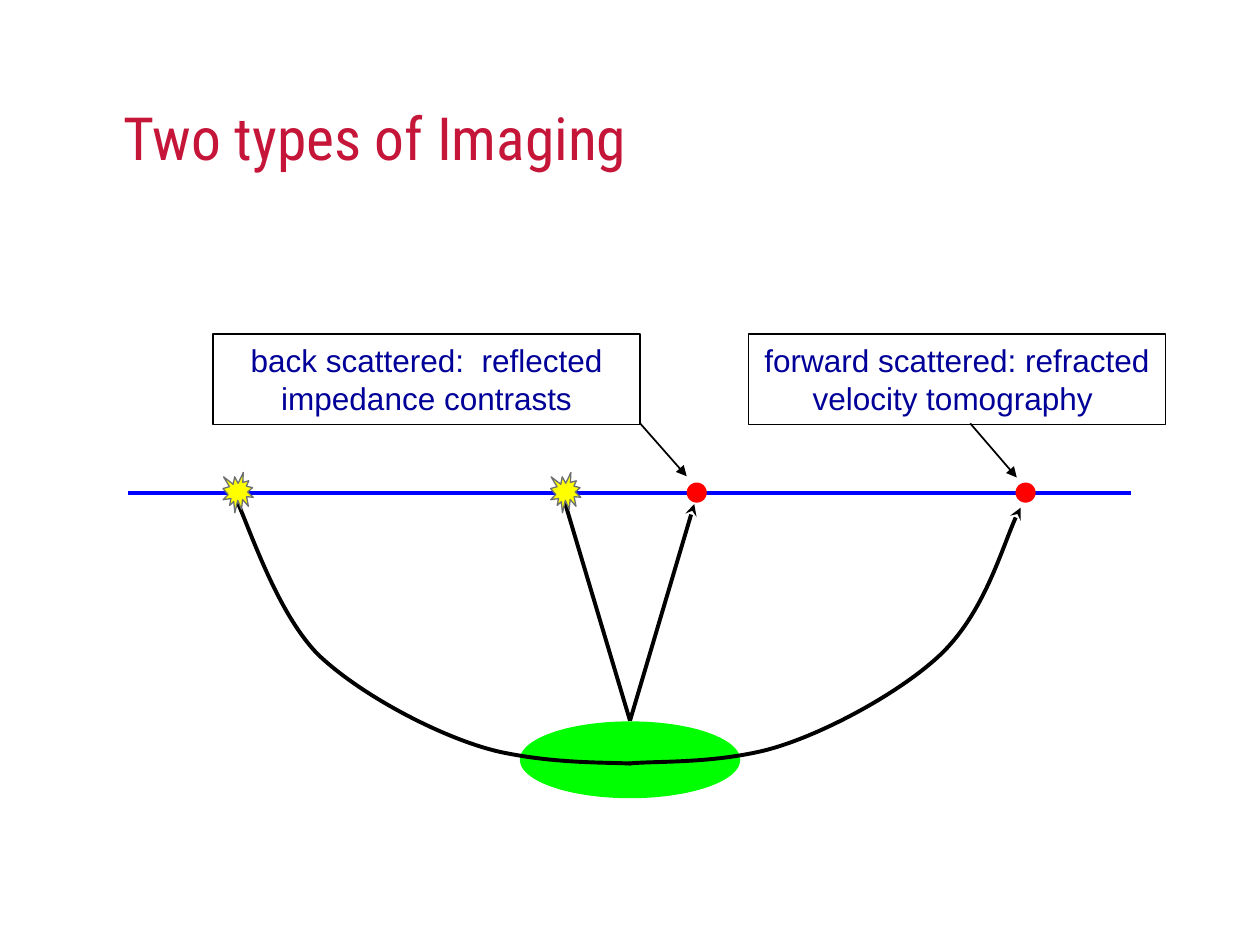
from lxml.etree import SubElement
from pptx import Presentation
from pptx.dml.color import RGBColor
from pptx.enum.shapes import MSO_CONNECTOR as Connector, MSO_SHAPE as Preset
from pptx.enum.text import MSO_ANCHOR as Anchor, PP_ALIGN as Align
from pptx.oxml.ns import qn
from pptx.util import Inches, Pt

COLORS = {
    "title": "C51538",
    "label": "000099",
    "surface": "0000FF",
    "ray": "000000",
    "target": "00FF00",
    "receiver": "FF0000",
    "source": "FFFF00",
    "source_edge": "6C7070",
}


class ImagingSlide:
    body_font = "Arial"
    title_font = "Roboto Condensed"
    ray_width = 2.25

    def __init__(self, slide):
        self.shapes = slide.shapes

    def color(self, name):
        return RGBColor.from_string(COLORS[name])

    def outline(self, shape, color, width, head=None, tail=None):
        shape.line.color.rgb = self.color(color)
        shape.line.width = Pt(width)
        for tag, kind in (("a:headEnd", head), ("a:tailEnd", tail)):
            if kind:
                SubElement(shape.line._get_or_add_ln(), qn(tag), type=kind)

    def set_text(self, frame, text, font, size, color, align):
        frame.word_wrap = True
        frame.text = text
        paragraph = frame.paragraphs[0]
        paragraph.alignment = align
        run_font = paragraph.runs[0].font
        run_font.name, run_font.size = font, Pt(size)
        run_font.color.rgb = self.color(color)

    def title(self, text, left, top, width, height):
        frame = self.shapes.add_textbox(*map(Inches, (left, top, width, height))).text_frame
        frame.margin_left = frame.margin_right = frame.margin_top = frame.margin_bottom = 0
        frame.vertical_anchor = Anchor.BOTTOM
        self.set_text(frame, text, self.title_font, 34, "title", Align.LEFT)

    def label(self, text, left, top, width, height):
        box = self.shapes.add_shape(Preset.RECTANGLE, *map(Inches, (left, top, width, height)))
        box.shadow.inherit = False
        box.fill.background()
        self.outline(box, "ray", 1)
        box.text_frame.vertical_anchor = Anchor.MIDDLE
        self.set_text(box.text_frame, text, self.body_font, 18, "label", Align.CENTER)

    def marker(self, preset, center, width, height, fill, edge=None):
        x, y = center
        mark = self.shapes.add_shape(
            preset, Inches(x - width / 2), Inches(y - height / 2), Inches(width), Inches(height))
        mark.shadow.inherit = False
        mark.fill.solid()
        mark.fill.fore_color.rgb = self.color(fill)
        if edge:
            self.outline(mark, edge, 0.75)
        else:
            mark.line.fill.background()

    def source(self, center):
        self.marker(Preset.EXPLOSION1, center, 0.24, 0.32, "source", "source_edge")

    def receiver(self, center):
        self.marker(Preset.OVAL, center, 0.16, 0.16, "receiver")

    def line(self, start, end, color, width, tail=None):
        connector = self.shapes.add_connector(Connector.STRAIGHT, *map(Inches, start + end))
        self.outline(connector, color, width, tail=tail)
        SubElement(connector._element.spPr, qn("a:effectLst"))

    def curve(self, points, head=None):
        """Draw cubic Béziers: a start point, then two controls and an end per segment."""
        corners = [tuple(map(Inches, point)) for point in points]
        builder = self.shapes.build_freeform(*corners[0])
        builder.add_line_segments(corners[1:], close=False)
        ray = builder.convert_to_shape()
        ray.shadow.inherit = False
        ray.fill.background()
        ray_outline = next(ray._element.iter(qn("a:path")))
        steps = ray_outline.findall(qn("a:lnTo"))
        for i in range(0, len(steps), 3):
            bezier = SubElement(ray_outline, qn("a:cubicBezTo"))
            for step in steps[i:i + 3]:
                bezier.append(step[0])
                ray_outline.remove(step)
        self.outline(ray, "ray", self.ray_width, head=head)


def main():
    prs = Presentation()
    prs.slide_width, prs.slide_height = Inches(10), Inches(7.5)
    page = ImagingSlide(prs.slides.add_slide(prs.slide_layouts[6]))

    surface = 3.91
    reflection_point = (5, 5.72)
    width = page.ray_width

    page.line((1.02, surface), (8.98, surface), "surface", width)
    page.marker(Preset.OVAL, (5, 6.03), 1.75, 0.61, "target")
    page.receiver((5.53, surface))
    page.line((4.46, surface), reflection_point, "ray", width)
    page.line(reflection_point, (5.51, 4), "ray", width, tail="stealth")

    page.label("back scattered:  reflected impedance contrasts", 1.69, 2.65, 3.39, 0.72)
    page.line((5.08, 3.36), (5.45, 3.78), "ray", 1, tail="triangle")
    page.label("forward scattered: refracted velocity tomography ", 5.94, 2.65, 3.31, 0.72)
    page.line((7.7, 3.36), (8.07, 3.79), "ray", 1, tail="triangle")

    page.curve([(1.85, surface), (1.96, 4.12), (2.18, 4.85), (2.53, 5.2),
                (2.89, 5.54), (3.56, 5.88), (3.98, 5.97),
                (4.41, 6.06), (4.79, 6.05), (5.01, 6.06)])
    page.curve([(8.1, 4.03), (7.99, 4.22), (7.81, 4.87), (7.46, 5.2),
                (7.12, 5.52), (6.44, 5.88), (6.01, 5.97),
                (5.59, 6.06), (5.2, 6.04), (4.99, 6.06)], head="stealth")
    page.receiver((8.14, surface))
    for x in (4.49, 1.89):
        page.source((x, surface))

    page.title("Two types of Imaging", 0.98, 0.67, 7.71, 0.7)
    prs.save("out.pptx")


if __name__ == "__main__":
    main()
